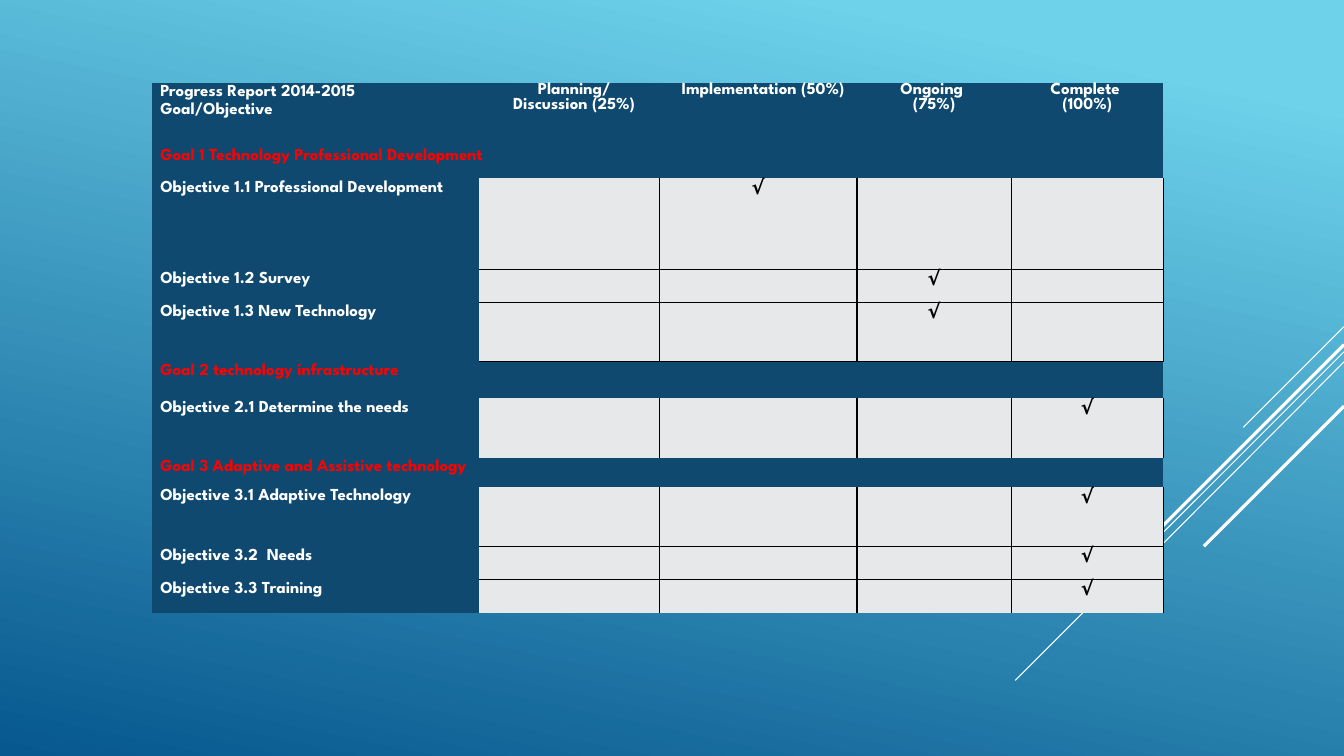
"""Build the technology progress report slide."""
from lxml.etree import SubElement
from pptx import Presentation
from pptx.dml.color import RGBColor
from pptx.enum.shapes import MSO_CONNECTOR as Link
from pptx.enum.text import PP_ALIGN as Align
from pptx.oxml.ns import qn
from pptx.util import Inches, Pt

NAVY = RGBColor(0x0F, 0x49, 0x6F)
GREY = RGBColor(0xE7, 0xE8, 0xEA)
WHITE = RGBColor(0xFF, 0xFF, 0xFF)
RED = RGBColor(0xFF, 0x00, 0x00)
BLACK = RGBColor(0x00, 0x00, 0x00)
SKY = RGBColor(0x6E, 0xD2, 0xEB)
DEEP = RGBColor(0x06, 0x58, 0x8E)
FONT = "League Spartan"


def write(cell, text, color, size=12, align=Align.LEFT, loose=True):
    cell.text_frame.text = text
    for par in cell.text_frame.paragraphs:
        par.alignment = align
        if loose:
            par.line_spacing = 1.15
            par.space_before, par.space_after = Pt(5), Pt(10)
        for run in par.runs:
            run.font.name, run.font.size = FONT, Pt(size)
            run.font.bold = True
            run.font.color.rgb = color


def edge(cell, sides):
    props = cell._tc.get_or_add_tcPr()
    for side in sides:
        line = SubElement(props, qn(f"a:ln{side}"), w=str(Pt(1)))
        fill = SubElement(line, qn("a:solidFill"))
        SubElement(fill, qn("a:srgbClr"), val=str(BLACK))


deck = Presentation()
deck.slide_width, deck.slide_height = Inches(13.33), Inches(7.5)
slide = deck.slides.add_slide(deck.slide_layouts[6])

back = slide.background.fill
back.gradient()
back.gradient_angle = 258
for stop, color, pos in zip(back.gradient_stops, (SKY, DEEP), (0.1, 1)):
    stop.color.rgb, stop.position = color, pos

rays = [
    (3.24, 12.33, 4.24, 0.75),
    (3.49, 10.07, 6.75, 0.75),
    (3.59, 11.26, 5.67, 0.75),
    (3.42, 11.42, 5.33, 2.25),
    (4.03, 11.94, 5.42, 2.25),
]
for top, left, low, width in rays:
    ray = slide.shapes.add_connector(
        Link.STRAIGHT, Inches(13.33), Inches(top), Inches(left), Inches(low))
    ray.line.color.rgb, ray.line.width = WHITE, Pt(width)
    SubElement(ray.element.spPr, qn("a:effectLst"))

heads = {
    1: "Planning/\nDiscussion (25%)",
    3: "Implementation (50%)",
    4: "Ongoing \n(75%)",
    5: "Complete \n(100%)",
}
goals = [
    ("Goal 1 Technology Professional Development", 0.29, None),
    ("Objective 1.1 Professional Development", 0.9, 2),
    ("Objective 1.2 Survey", 0.33, 4),
    ("Objective 1.3 New Technology", 0.59, 4),
    ("Goal 2 technology infrastructure", 0.36, None),
    ("Objective 2.1 Determine the needs", 0.59, 5),
    ("Goal 3 Adaptive and Assistive technology", 0.29, None),
    ("Objective 3.1 Adaptive Technology", 0.59, 5),
    ("Objective 3.2  Needs", 0.33, 5),
    ("Objective 3.3 Training", 0.33, 5),
]
cols = [3.24, 1.79, 0.1, 1.86, 1.53, 1.51]

frame = slide.shapes.add_table(
    len(goals) + 1, len(cols), Inches(1.51), Inches(0.82), Inches(10.03), Inches(5.26))
for style in frame.element.iter(qn("a:tableStyleId")):
    style.text = "{2D5ABB26-0587-4C30-8999-92F81FD0307C}"
table = frame.table
table.first_row = table.horz_banding = False
for col, width in zip(table.columns, cols):
    col.width = Inches(width)
for row, high in zip(table.rows, [0.66] + [goal[1] for goal in goals]):
    row.height = Inches(high)
for cell in table.iter_cells():
    cell.margin_left = cell.margin_right = Inches(0.08)
    cell.margin_top = cell.margin_bottom = 0

table.cell(0, 1).merge(table.cell(0, 2))
write(table.cell(0, 0), "Progress Report 2014-2015 Goal/Objective", WHITE)
for c, text in heads.items():
    write(table.cell(0, c), text, WHITE, align=Align.CENTER, loose=False)

marks = [None] + [goal[2] for goal in goals] + [None]
for r, (text, high, mark) in enumerate(goals, 1):
    first = table.cell(r, 0)
    if mark is None:
        first.merge(table.cell(r, 5))
        write(first, text, RED, loose=r > 1)
        continue
    write(first, text, WHITE)
    table.cell(r, 2).merge(table.cell(r, 3))
    for c in (1, 2, 4, 5):
        sides = "L" * (c > 1) + "R" * (c < 5)
        sides += "T" * (marks[r - 1] is not None) + "B" * (marks[r + 1] is not None)
        edge(table.cell(r, c), sides)
    write(table.cell(r, mark), "√", BLACK, 14, Align.CENTER)

for r, mark in enumerate(marks[:-1]):
    for c in range(len(cols)):
        cell = table.cell(r, c)
        cell.fill.solid()
        cell.fill.fore_color.rgb = GREY if c and mark else NAVY
        if not cell.text_frame.text:
            SubElement(cell.text_frame.paragraphs[0]._p, qn("a:endParaRPr"), sz="1200")

deck.save("out.pptx")
